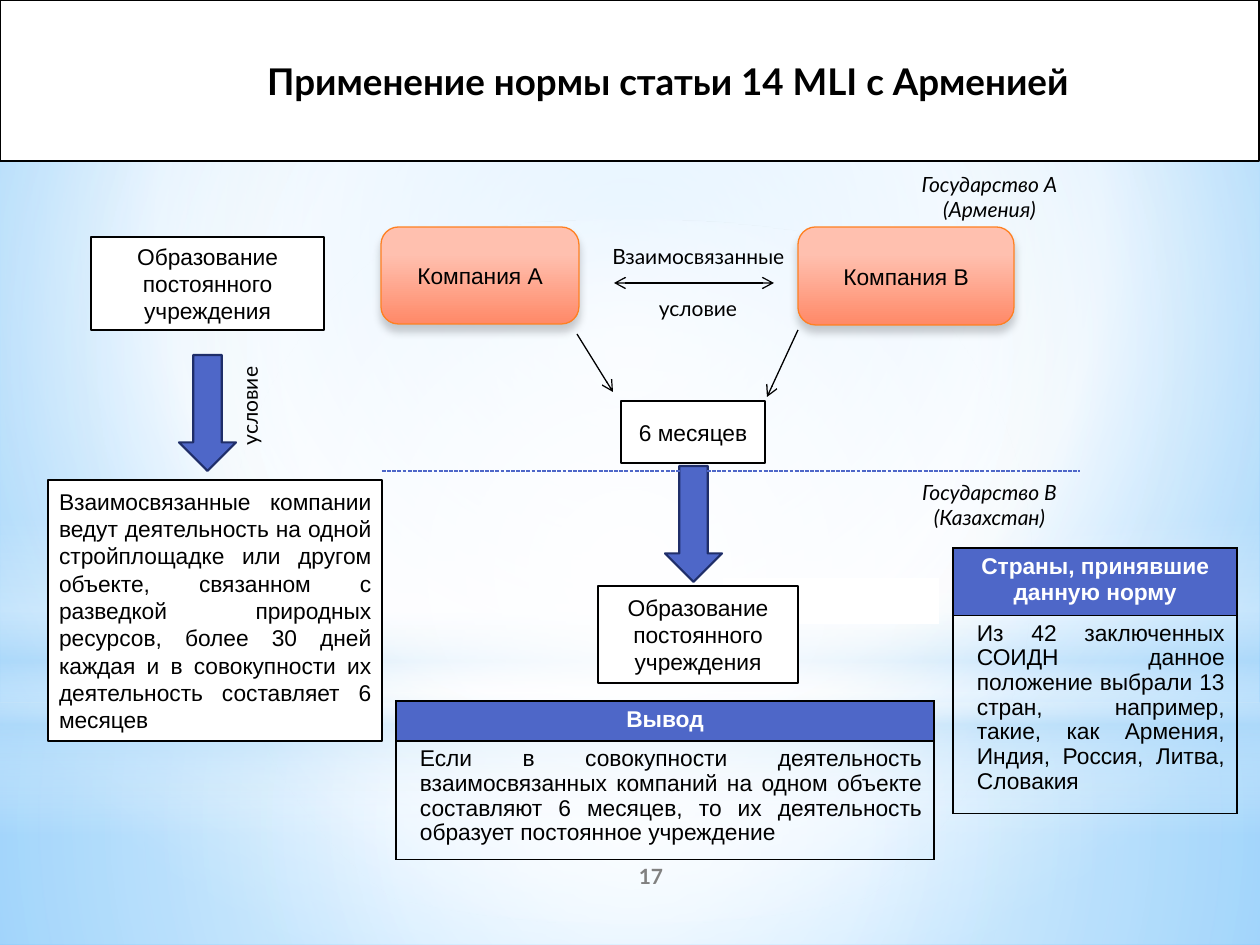
from dataclasses import dataclass

from pptx import Presentation
from pptx.dml.color import RGBColor
from pptx.enum.dml import MSO_LINE
from pptx.enum.shapes import MSO_CONNECTOR, MSO_SHAPE as Preset
from pptx.enum.text import MSO_ANCHOR, PP_ALIGN as Align
from pptx.oxml import parse_xml
from pptx.oxml.ns import nsdecls, qn
from pptx.util import Pt

EMU_PER_PX = 914400 / 126
CENTRE = (50, 50, 50, 50)


@dataclass(frozen=True)
class Theme:
    sans: str = "Arial"
    label: str = "Lato"
    black: str = "000000"
    white: str = "FFFFFF"
    grey: str = "808080"
    blue: str = "4E67C8"
    navy: str = "1F2E69"
    orange: str = "FF8021"
    peach: tuple = ((28, "FFC0AF"), (100, "FF8968"))
    mist: str = "B4DCFA"
    title_size: int = 21
    body_size: int = 13
    label_size: int = 12
    thin: float = 0.75
    thick: float = 1.25


THEME = Theme()


def px(value):
    return round(value * EMU_PER_PX)


def rgb(value):
    return RGBColor.from_string(value)


# Paint
def paint_gradient(fill, element, stops, focus=None):
    """Stops are (position, colour[, opacity]); without a focus it runs downwards."""
    fill.gradient()
    stop_xml = "".join(
        f'<a:gs pos="{position * 1000}"><a:srgbClr val="{colour}">'
        f'<a:alpha val="{(opacity[0] if opacity else 100) * 1000}"/></a:srgbClr></a:gs>'
        for position, colour, *opacity in stops)
    if focus:
        sides = " ".join(f'{side}="{value * 1000}"' for side, value in zip("ltrb", focus))
        direction = f'<a:path path="circle"><a:fillToRect {sides}/></a:path>'
    else:
        direction = '<a:lin ang="5400000" scaled="0"/>'
    old = element.find(".//" + qn("a:gradFill"))
    old.getparent().replace(old, parse_xml(
        f'<a:gradFill {nsdecls("a")} rotWithShape="1"><a:gsLst>{stop_xml}</a:gsLst>'
        f'{direction}</a:gradFill>'))


def add_soft_shadow(shape):
    shape.element.spPr.find(qn("a:effectLst")).append(parse_xml(
        f'<a:outerShdw {nsdecls("a")} blurRad="{Pt(5)}" dist="{Pt(4)}" dir="5400000" '
        f'rotWithShape="0"><a:srgbClr val="{THEME.black}"><a:alpha val="20000"/>'
        '</a:srgbClr></a:outerShdw>'))


# Text
def write(frame, text, align=Align.CENTER, font=THEME.sans, size=THEME.body_size,
          colour=THEME.black, bold=False, italic=False):
    frame.word_wrap = True
    frame.text = text
    for paragraph in frame.paragraphs:
        paragraph.alignment = align
        paragraph.font.name = font
        paragraph.font.size = Pt(size)
        paragraph.font.color.rgb = rgb(colour)
        paragraph.font.bold = bold
        paragraph.font.italic = italic


def set_insets(frame, left=11, top=5, right=11, bottom=5):
    frame.vertical_anchor = MSO_ANCHOR.MIDDLE
    frame.margin_left, frame.margin_right = px(left), px(right)
    frame.margin_top, frame.margin_bottom = px(top), px(bottom)


# Elements
def add_shape(slide, preset, box, fill=None, line=None, width=THEME.thin):
    shape = slide.shapes.add_shape(preset, *map(px, box))
    shape.shadow.inherit = False
    if fill:
        shape.fill.solid()
        shape.fill.fore_color.rgb = rgb(fill)
    if line:
        shape.line.color.rgb = rgb(line)
        shape.line.width = Pt(width)
    else:
        shape.line.fill.background()
    return shape


def add_overlay(slide, preset, box, stops, focus=None):
    shape = add_shape(slide, preset, box)
    paint_gradient(shape.fill, shape.element, stops, focus)


def add_box(slide, box, text, align=Align.CENTER):
    shape = add_shape(slide, Preset.RECTANGLE, box, THEME.white, THEME.black)
    set_insets(shape.text_frame)
    write(shape.text_frame, text, align)


def add_company(slide, box, name):
    shape = add_shape(slide, Preset.ROUNDED_RECTANGLE, box, line=THEME.orange)
    shape.adjustments[0] = 0.18
    paint_gradient(shape.fill, shape.element, THEME.peach)
    add_soft_shadow(shape)
    set_insets(shape.text_frame)
    write(shape.text_frame, name)


def add_label(slide, box, text, rotation=0, **style):
    label = slide.shapes.add_textbox(*map(px, box))
    label.rotation = rotation
    set_insets(label.text_frame)
    write(label.text_frame, text, font=THEME.label, **{"size": THEME.label_size, **style})


def add_line(slide, ends, colour=THEME.black, arrows=(), dash=None):
    connector = slide.shapes.add_connector(MSO_CONNECTOR.STRAIGHT, *map(px, ends))
    connector.line.color.rgb = rgb(colour)
    connector.line.width = Pt(THEME.thin)
    if dash:
        connector.line.dash_style = dash
    outline = connector.line._get_or_add_ln()
    for end in arrows:
        outline.append(parse_xml(f'<a:{end} {nsdecls("a")} type="arrow"/>'))
    connector.element.spPr.append(parse_xml(f'<a:effectLst {nsdecls("a")}/>'))


def add_note_table(slide, box, header_height, header, body):
    left, top, width, height = box
    table = slide.shapes.add_table(2, 1, *map(px, box)).table
    table.first_row = table.horz_banding = False
    table.rows[0].height = px(header_height)
    table.rows[1].height = px(height - header_height)
    head_cell, body_cell = table.cell(0, 0), table.cell(1, 0)
    write(head_cell.text_frame, header, colour=THEME.white, bold=True)
    write(body_cell.text_frame, body, Align.JUSTIFY)
    body_cell.text_frame.paragraphs[0].line_spacing = 0.97
    head_cell.fill.solid()
    head_cell.fill.fore_color.rgb = rgb(THEME.blue)
    body_cell.fill.background()
    body_cell.margin_left = px(24)
    for cell in (head_cell, body_cell):
        properties = cell._tc.get_or_add_tcPr()
        for index, side in enumerate("LRTB"):
            properties.insert(index, parse_xml(
                f'<a:ln{side} {nsdecls("a")} w="{Pt(1)}"><a:solidFill>'
                f'<a:srgbClr val="{THEME.black}"/></a:solidFill></a:ln{side}>'))


def add_backdrop(slide):
    white, mist = THEME.white, THEME.mist
    paint_gradient(slide.background.fill, slide.element,
                   [(0, "9ED5FF"), (60, white), (100, "5BB9FF")], (20, 10, 20, 60))
    add_overlay(slide, Preset.RECTANGLE, (0, 703, 1260, 242),
                [(0, white, 91), (37, white, 76), (100, mist, 79)], CENTRE)
    add_overlay(slide, Preset.RECTANGLE, (0, 0, 1260, 703),
                [(0, white, 89), (48, white, 62), (100, mist, 79)], CENTRE)
    add_overlay(slide, Preset.RECTANGLE, (0, 519, 1260, 315),
                [(0, white, 0), (29, white, 30), (45, mist, 40),
                 (55, white, 26), (65, mist, 60), (100, white, 0)])
    add_overlay(slide, Preset.OVAL, (0, 220, 1260, 703),
                [(0, white, 100), (56, white, 0)], CENTRE)


def main():
    presentation = Presentation()
    presentation.slide_width, presentation.slide_height = px(1260), px(945)
    slide = presentation.slides.add_slide(presentation.slide_layouts[6])
    add_backdrop(slide)

    # Title band
    band = add_shape(slide, Preset.RECTANGLE, (0, 0, 1259, 161),
                     THEME.white, THEME.black, THEME.thick)
    set_insets(band.text_frame, left=88)
    write(band.text_frame, "Применение нормы статьи 14 MLI с Арменией",
          font=THEME.label, size=THEME.title_size, bold=True)

    # Companies and their link
    add_company(slide, (381, 227, 198, 97), "Компания А")
    add_company(slide, (798, 227, 216, 98), "Компания В")
    add_label(slide, (599, 237, 199, 39), "Взаимосвязанные")
    add_label(slide, (630, 291, 136, 34), "условие")
    add_line(slide, (614, 283, 774, 283), arrows=("headEnd", "tailEnd"))
    add_line(slide, (577, 334, 613, 392), arrows=("tailEnd",))
    add_line(slide, (798, 330, 767, 397), arrows=("tailEnd",))

    # Boxes
    add_shape(slide, Preset.RECTANGLE, (723, 578, 216, 46), THEME.white)
    add_box(slide, (48, 480, 334, 261),
            "Взаимосвязанные компании ведут деятельность на одной стройплощадке или "
            "другом объекте, связанном с разведкой природных ресурсов, более 30 дней "
            "каждая и в совокупности их деятельность составляет 6 месяцев", Align.JUSTIFY)
    add_box(slide, (91, 237, 233, 93), "Образование постоянного учреждения")
    add_box(slide, (598, 586, 200, 97), "Образование\nпостоянного\nучреждения")
    add_box(slide, (621, 401, 144, 62), "6 месяцев")
    add_label(slide, (193, 390, 113, 32), "условие", rotation=270)

    # Tables
    add_note_table(slide, (953, 548, 284, 251), 63, "Страны, принявшие\nданную норму",
                   "Из 42 заключенных СОИДН данное положение выбрали 13 стран, "
                   "например, такие, как Армения, Индия, Россия, Литва, Словакия")
    add_note_table(slide, (396, 701, 538, 150), 37, "Вывод",
                   "Если в совокупности деятельность взаимосвязанных компаний на одном "
                   "объекте составляют 6 месяцев, то их деятельность образует постоянное "
                   "учреждение")

    # Block arrows, state border and state names
    for left, top in ((179, 355), (665, 466)):
        add_shape(slide, Preset.DOWN_ARROW, (left, top, 57, 116),
                  THEME.blue, THEME.navy, THEME.thick)
    add_line(slide, (382, 471, 1080, 471), THEME.blue, dash=MSO_LINE.SQUARE_DOT)
    add_label(slide, (899, 473, 181, 64), "Государство В (Казахстан)", italic=True)
    add_label(slide, (899, 165, 181, 64), "Государство А (Армения)", italic=True)

    # Page number
    add_label(slide, (525, 851, 252, 50), "17", colour=THEME.grey, bold=True)

    presentation.save("out.pptx")


if __name__ == "__main__":
    main()
